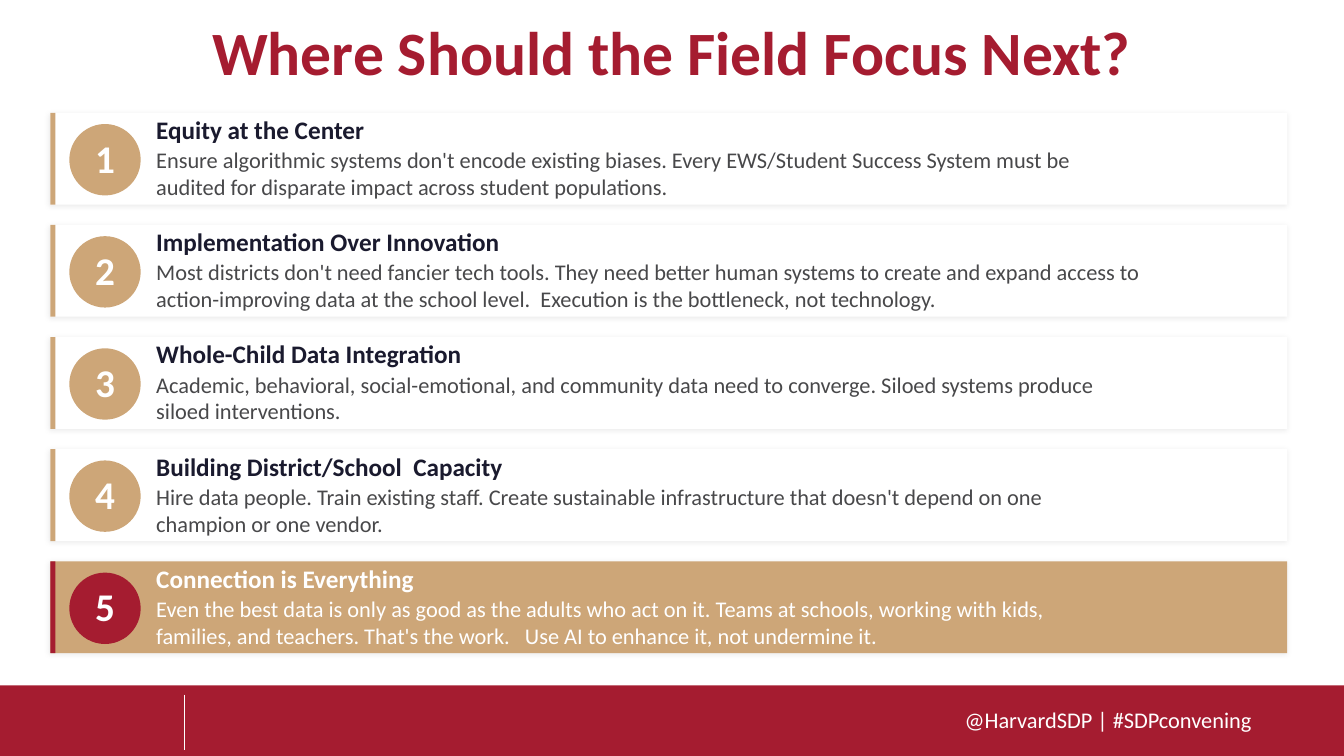
from lxml import etree
from pptx import Presentation
from pptx.dml.color import RGBColor
from pptx.enum.shapes import MSO_CONNECTOR, MSO_SHAPE
from pptx.enum.text import MSO_ANCHOR, PP_ALIGN
from pptx.oxml import parse_xml
from pptx.oxml.ns import nsdecls, qn
from pptx.util import Pt

CRIMSON = RGBColor(0xA5, 0x1C, 0x30)
TAN = RGBColor(0xCD, 0xA6, 0x78)
NAVY = RGBColor(0x1A, 0x1A, 0x2E)
GRAY = RGBColor(0x48, 0x48, 0x4A)
WHITE = RGBColor(0xFF, 0xFF, 0xFF)

SLIDE_WIDTH, SLIDE_HEIGHT = 960, 540
FOOTER_TOP = 489.6
CARD_LEFT, CARD_TOP, CARD_WIDTH, CARD_HEIGHT = 36, 80.6, 883.4, 65.6
CARD_PITCH = 80.1
TEXT_LEFT = 111.6

# Heading, heading width, body, body width
PRIORITIES = [
    ("Equity at the Center", 216,
     "Ensure algorithmic systems don't encode existing biases. Every EWS/Student Success System "
     "must be audited for disparate impact across student populations.", 689),
    ("Implementation Over Innovation", 307,
     "Most districts don't need fancier tech tools. They need better human systems to create and "
     "expand access to action-improving data at the school level.  Execution is the bottleneck, "
     "not technology.", 747),
    ("Whole-Child Data Integration", 309,
     "Academic, behavioral, social-emotional, and community data need to converge. Siloed systems "
     "produce siloed interventions.", 682),
    ("Building District/School  Capacity", 253,
     "Hire data people. Train existing staff. Create sustainable infrastructure that doesn't "
     "depend on one champion or one vendor.", 689),
    ("Connection is Everything", 216,
     "Even the best data is only as good as the adults who act on it. Teams at schools, working "
     "with kids, families, and teachers. That's the work.   Use AI to enhance it, not undermine "
     "it.", 678),
]


def write_text(shape, text, size, color, bold=False, align=PP_ALIGN.LEFT, bottom_inset=0):
    frame = shape.text_frame
    frame_format = {
        "word_wrap": True, "vertical_anchor": MSO_ANCHOR.MIDDLE,
        "margin_left": 0, "margin_top": 0, "margin_right": 0, "margin_bottom": Pt(bottom_inset),
    }
    for name, value in frame_format.items():
        setattr(frame, name, value)
    paragraph = frame.paragraphs[0]
    paragraph.alignment = align
    run = paragraph.add_run()
    run.text = text
    for name, value in {"name": "Calibri", "size": Pt(size), "bold": bold}.items():
        setattr(run.font, name, value)
    run.font.color.rgb = color
    return paragraph


def add_text(shapes, box, text, size, color, **text_format):
    textbox = shapes.add_textbox(*map(Pt, box))
    return write_text(textbox, text, size, color, **text_format)


def add_filled(shapes, preset, box, color):
    shape = shapes.add_shape(preset, *map(Pt, box))
    shape.shadow.inherit = False
    shape.fill.solid()
    shape.fill.fore_color.rgb = color
    shape.line.fill.background()
    return shape


def add_soft_shadow(shape):
    """Cast a faint black shadow toward the lower left."""
    effects = shape._element.spPr.find(qn("a:effectLst"))
    effects.append(parse_xml(
        f'<a:outerShdw {nsdecls("a")} blurRad="{Pt(4)}" dist="{Pt(1)}" dir="8100000" '
        'algn="bl" rotWithShape="0"><a:srgbClr val="000000"><a:alpha val="8000"/>'
        '</a:srgbClr></a:outerShdw>'))


def add_card(slide, index, priority, highlighted):
    heading, heading_width, body, body_width = priority
    background, accent = (TAN, CRIMSON) if highlighted else (WHITE, TAN)
    heading_color, body_color = (WHITE, WHITE) if highlighted else (NAVY, GRAY)
    top = CARD_TOP + index * CARD_PITCH
    shapes = slide.shapes.add_group_shape().shapes

    panel = add_filled(shapes, MSO_SHAPE.RECTANGLE,
                       (CARD_LEFT, top, CARD_WIDTH, CARD_HEIGHT), background)
    add_soft_shadow(panel)
    add_filled(shapes, MSO_SHAPE.RECTANGLE, (CARD_LEFT, top, 3.6, CARD_HEIGHT), accent)
    badge = add_filled(shapes, MSO_SHAPE.OVAL, (49.5, top + 8, 51, 51), accent)
    write_text(badge, str(index + 1), 28, WHITE, bold=True, align=PP_ALIGN.CENTER,
               bottom_inset=3)
    add_text(shapes, (TEXT_LEFT, top - 0.7, heading_width, 25.2), heading, 18, heading_color,
             bold=True)
    add_text(shapes, (TEXT_LEFT, top + 23, body_width, 40.3), body, 16, body_color)


def add_footer(slide):
    add_filled(slide.shapes, MSO_SHAPE.RECTANGLE,
               (0, FOOTER_TOP, SLIDE_WIDTH, SLIDE_HEIGHT - FOOTER_TOP), CRIMSON)
    add_text(slide.shapes, (604, 500.4, 290, 26.6), "@HarvardSDP | #SDPconvening", 16, WHITE,
             align=PP_ALIGN.RIGHT)
    divider = slide.shapes.add_connector(MSO_CONNECTOR.STRAIGHT,
                                         *map(Pt, (131.8, 496.1, 131.8, 535.7)))
    divider.line.color.rgb = WHITE
    divider.line.width = Pt(0.5)
    etree.SubElement(divider._element.spPr, qn("a:effectLst"))


def main():
    presentation = Presentation()
    presentation.slide_width = Pt(SLIDE_WIDTH)
    presentation.slide_height = Pt(SLIDE_HEIGHT)
    slide = presentation.slides.add_slide(presentation.slide_layouts[6])

    add_footer(slide)
    title = add_text(slide.shapes, (0, 7.2, SLIDE_WIDTH, 65.5),
                     "Where Should the Field Focus Next?", 44, CRIMSON, bold=True,
                     align=PP_ALIGN.CENTER)
    title.line_spacing = 0.9
    for index, priority in enumerate(PRIORITIES):
        add_card(slide, index, priority, highlighted=index == len(PRIORITIES) - 1)

    presentation.save("out.pptx")


if __name__ == "__main__":
    main()
